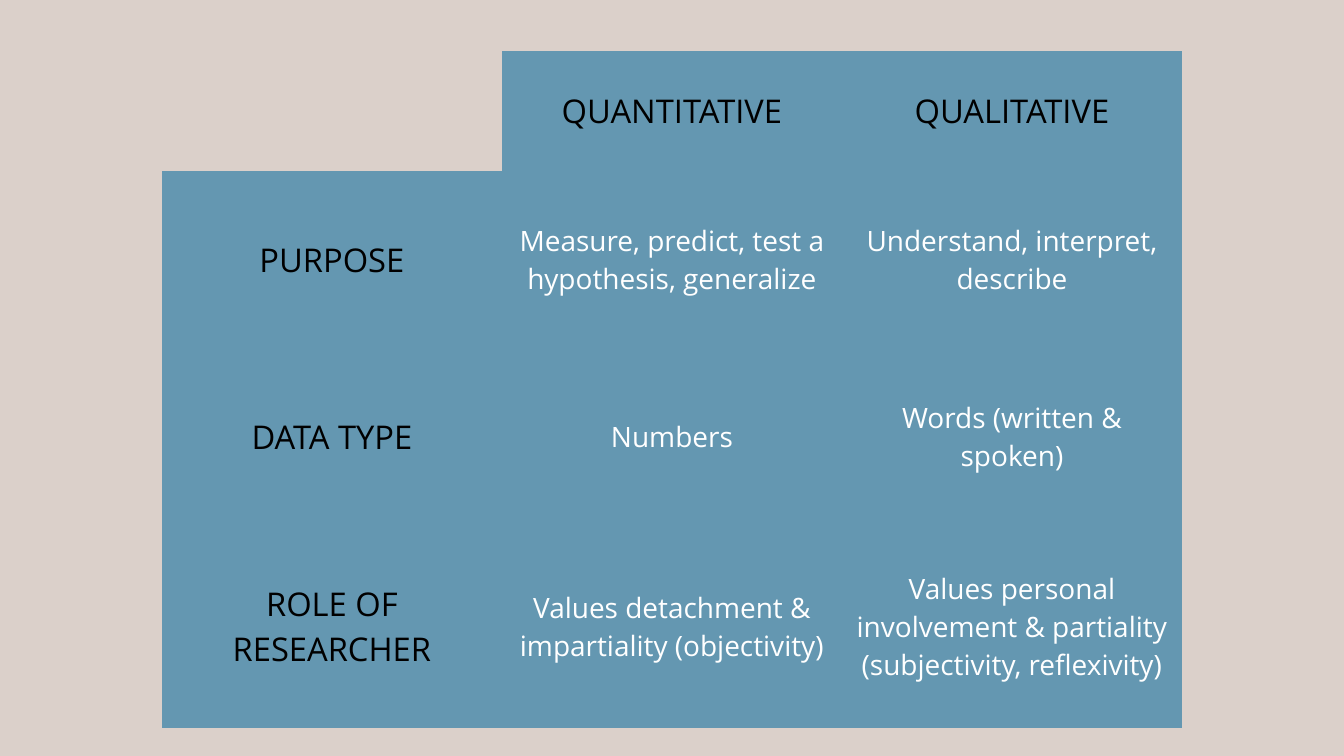
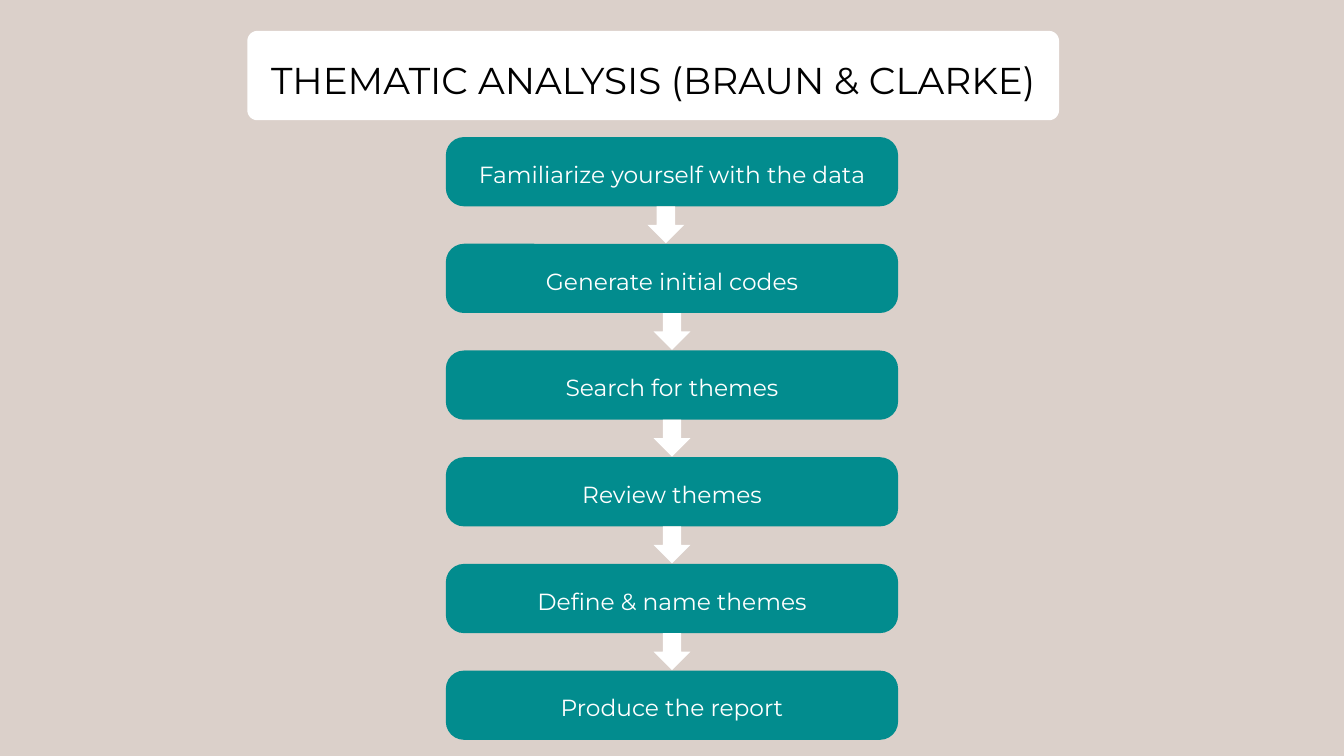
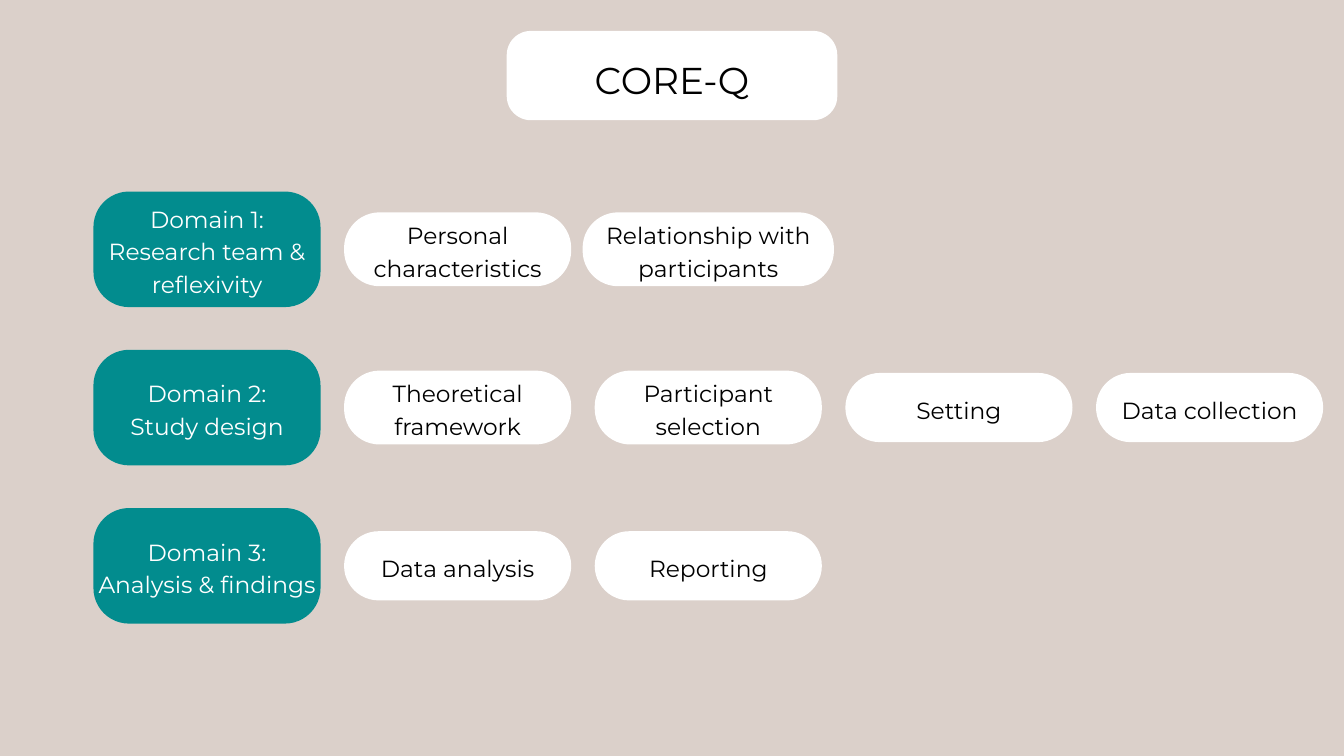
from pptx import Presentation, util as u
from pptx.dml.color import RGBColor
from pptx.enum import shapes, text
from pptx.oxml.ns import qn
from lxml import etree

C = {"sand": "DBD0CA", "blue": "6497B1", "teal": "028C8E", "white": "FFFFFF", "black": "000000"}
W, H = 20, 11.25
TABLE_FONT, FONT = "Open Sans", "Montserrat"

COMPARISON = [
    ["", "QUANTITATIVE", "QUALITATIVE"],
    ["PURPOSE", "Measure, predict, test a hypothesis, generalize", "Understand, interpret, describe"],
    ["DATA TYPE", "Numbers", "Words (written & spoken)"],
    ["ROLE OF RESEARCHER", "Values detachment & impartiality (objectivity)",
     "Values personal involvement & partiality (subjectivity, reflexivity)"],
]
COL_W, ROW_H = 5.06, [1.78, 2.64, 2.64, 3.01]

THEMATIC_TITLE = "THEMATIC ANALYSIS (BRAUN & CLARKE)"
STEPS = ["Familiarize yourself with the data", "Generate initial codes", "Search for themes",
         "Review themes", "Define & name themes", "Produce the report"]
ARROW_CENTERS = [9.91, 10, 10, 10, 10]

COREQ_TITLE = "CORE-Q"
NARROW, WIDE = 3.38, 3.74
LINE_H = {1: 1.03, 2: 1.1}
DOMAINS = [
    ("Domain 1: Research team & reflexivity",
     [("Personal characteristics", 2, NARROW), ("Relationship with participants", 2, WIDE)]),
    ("Domain 2:\nStudy design",
     [("Theoretical framework", 2, NARROW), ("Participant selection", 2, NARROW),
      ("Setting", 1, NARROW), ("Data collection", 1, NARROW)]),
    ("Domain 3:\nAnalysis & findings",
     [("Data analysis", 1, NARROW), ("Reporting", 1, NARROW)]),
]


def rgb(name):
    return RGBColor.from_string(C[name])


def style_text(tf, size, color, font=FONT, leading=None):
    for p in tf.paragraphs:
        p.alignment = text.PP_ALIGN.CENTER
        if leading:
            p.line_spacing = u.Pt(leading)
        for r in p.runs:
            r.font.name, r.font.size = font, u.Pt(size)
            r.font.color.rgb = rgb(color)


def fill_frame(tf, words, size, color):
    tf.text = words
    tf.word_wrap = True
    tf.auto_size = text.MSO_AUTO_SIZE.NONE
    tf.vertical_anchor = text.MSO_ANCHOR.MIDDLE
    tf.margin_left = tf.margin_right = tf.margin_top = tf.margin_bottom = u.Inches(0.06)
    style_text(tf, size, color, leading=size * 1.4)


def add_filled(s, kind, box, color):
    sp = s.shapes.add_shape(kind, *map(u.Inches, box))
    sp.shadow.inherit = False
    sp.fill.solid()
    sp.fill.fore_color.rgb = rgb(color)
    sp.line.fill.background()
    return sp


def add_card(s, box, color, radius):
    sp = add_filled(s, shapes.MSO_SHAPE.ROUNDED_RECTANGLE, box, color)
    sp.adjustments[0] = min(0.5, radius / min(box[2:]))
    return sp


def add_label(s, box, words, color, ink, radius):
    add_card(s, box, color, radius)
    tb = s.shapes.add_textbox(*map(u.Inches, box))
    fill_frame(tb.text_frame, words, 25, ink)


def add_titled_slide(prs, words, left, width, radius):
    s = prs.slides.add_slide(prs.slide_layouts[5])
    box = (left, 0.46, width, 1.33)
    title = s.shapes.title
    title.left, title.top, title.width, title.height = map(u.Inches, box)
    fill_frame(title.text_frame, words, 40, "black")
    title.element.addprevious(add_card(s, box, "white", radius).element)
    return s


def add_comparison(prs):
    s = prs.slides.add_slide(prs.slide_layouts[6])
    box = (2.41, 0.76, 3 * COL_W, sum(ROW_H))
    table = s.shapes.add_table(len(ROW_H), 3, *map(u.Inches, box)).table
    table.first_row = table.horz_banding = False
    for col in table.columns:
        col.width = u.Inches(COL_W)
    for i, (row, height) in enumerate(zip(COMPARISON, ROW_H)):
        table.rows[i].height = u.Inches(height)
        for j, words in enumerate(row):
            cell = table.cell(i, j)
            cell.text = words
            cell.vertical_anchor = text.MSO_ANCHOR.MIDDLE
            cell.margin_left = cell.margin_right = u.Inches(0.2)
            tcPr = cell._tc.get_or_add_tcPr()
            for side in ("a:lnL", "a:lnR", "a:lnT", "a:lnB"):
                ln = etree.SubElement(tcPr, qn(side), w="0")
                etree.SubElement(ln, qn("a:noFill"))
            cell.fill.solid()
            cell.fill.fore_color.rgb = rgb("blue" if words else "sand")
            heading = i == 0 or j == 0
            style_text(cell.text_frame, 35 if heading else 30,
                       "black" if heading else "white", TABLE_FONT)


def add_thematic(prs):
    s = add_titled_slide(prs, THEMATIC_TITLE, 3.68, 12.08, 0.15)
    top, width, height, arrow = 2.04, 6.73, 1.03, 0.55
    pitch = (9.98 - top) / (len(STEPS) - 1)
    for i, step in enumerate(STEPS):
        add_label(s, ((W - width) / 2, top + i * pitch, width, height), step, "teal", "white", 0.27)
    for i, center in enumerate(ARROW_CENTERS):
        add_filled(s, shapes.MSO_SHAPE.DOWN_ARROW,
                   (center - arrow / 2, top + i * pitch + height, arrow, arrow), "white")


def add_coreq(prs):
    width = 4.92
    s = add_titled_slide(prs, COREQ_TITLE, (W - width) / 2, width, 0.36)
    left, middle, col_pitch, row_pitch, height = 1.39, 3.71, 3.73, 2.355, 1.72
    for i, (domain, topics) in enumerate(DOMAINS):
        y = middle + i * row_pitch
        add_label(s, (left, y - height / 2, NARROW, height), domain, "teal", "white", 0.53)
        for j, (topic, lines, w) in enumerate(topics, 1):
            x = left + j * col_pitch + NARROW / 2
            h = LINE_H[lines]
            add_label(s, (x - w / 2, y - h / 2, w, h), topic, "white", "black", 0.53)


def main():
    prs = Presentation()
    prs.slide_width, prs.slide_height = u.Inches(W), u.Inches(H)
    background = prs.slide_master.background.fill
    background.solid()
    background.fore_color.rgb = rgb("sand")
    add_comparison(prs)
    add_thematic(prs)
    add_coreq(prs)
    prs.save("out.pptx")


if __name__ == "__main__":
    main()
